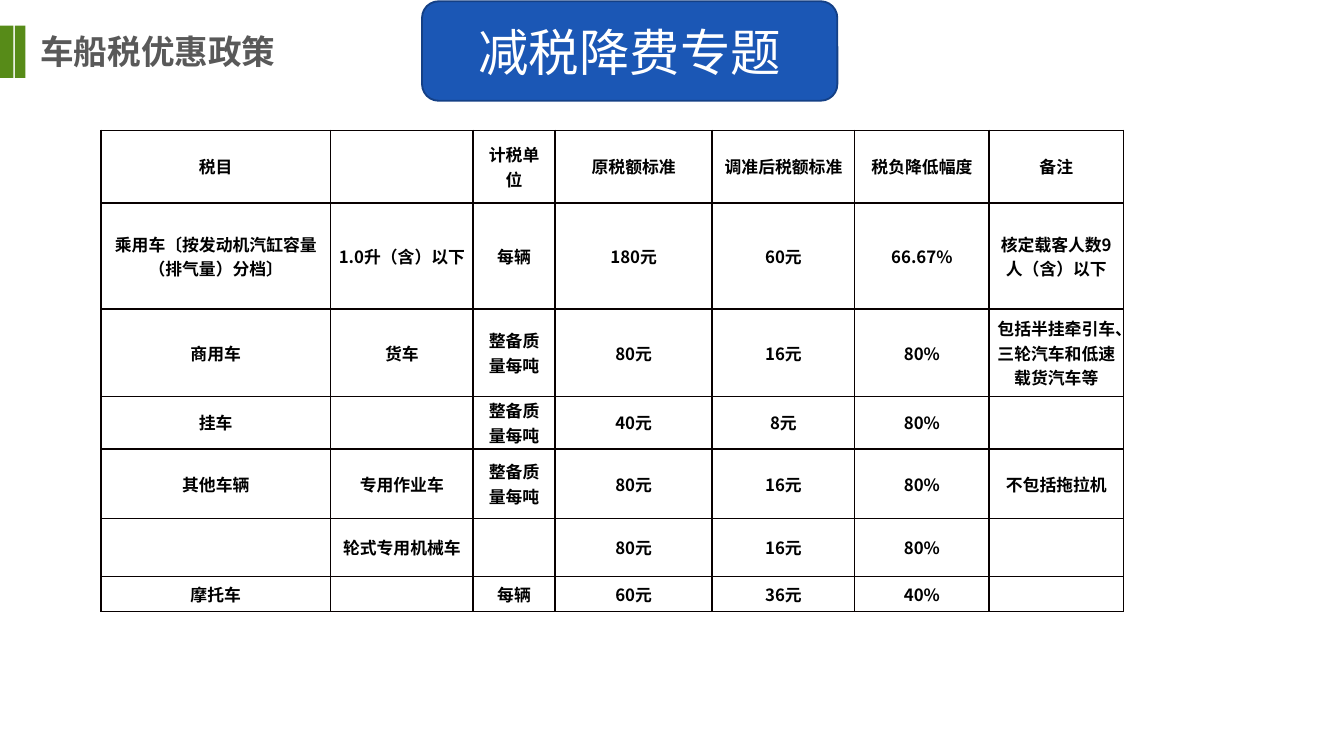
from lxml import etree
from pptx import Presentation
from pptx.dml.color import RGBColor
from pptx.enum.shapes import MSO_SHAPE
from pptx.enum.text import MSO_ANCHOR, MSO_AUTO_SIZE, PP_ALIGN
from pptx.oxml.ns import qn
from pptx.util import Inches, Pt

GREEN = RGBColor(0x57, 0x8B, 0x18)
BLUE = RGBColor(0x1B, 0x57, 0xB5)
NAVY = RGBColor(0x14, 0x40, 0x86)
GREY = RGBColor(0x59, 0x59, 0x59)
WHITE = RGBColor(0xFF, 0xFF, 0xFF)
BLACK = RGBColor(0x00, 0x00, 0x00)
BORDER = RGBColor(0x08, 0x00, 0x00)

RECTANGLE = MSO_SHAPE.RECTANGLE
BANNER = MSO_SHAPE.FLOWCHART_ALTERNATE_PROCESS
MIDDLE, TOP = MSO_ANCHOR.MIDDLE, MSO_ANCHOR.TOP
LEFT, CENTER = PP_ALIGN.LEFT, PP_ALIGN.CENTER
NO_AUTOSIZE = MSO_AUTO_SIZE.NONE

CJK_FONT = "Noto Sans CJK SC"
TITLE_FORMAT = {"name": CJK_FONT, "size": Pt(18), "bold": True}
BANNER_FORMAT = {"name": "Arial", "size": Pt(27), "bold": False}
CELL_FORMAT = {"name": CJK_FONT, "size": Pt(9), "bold": True}
BOX_FRAME = {
    "margin_left": Inches(0.07), "margin_right": Inches(0.07),
    "margin_top": Inches(0.04), "margin_bottom": Inches(0.04),
    "word_wrap": True, "auto_size": NO_AUTOSIZE,
}
CELL_FRAME = {
    "margin_left": Inches(0.06), "margin_right": Inches(0.06),
    "margin_top": 0, "margin_bottom": 0, "vertical_anchor": MIDDLE,
}

COLUMN_WIDTHS = [1.71, 1.06, 0.61, 1.17, 1.06, 1, 1]
ROW_HEIGHTS = [0.54, 0.79, 0.65, 0.39, 0.52, 0.43, 0.26]
TAX_ROWS = [
    ["税目", "", "计税单位", "原税额标准", "调准后税额标准", "税负降低幅度", "备注"],
    ["乘用车〔按发动机汽缸容量（排气量）分档〕", "1.0升（含）以下", "每辆",
     "180元", "60元", "66.67%", "核定载客人数9人（含）以下"],
    ["商用车", "货车", "整备质量每吨", "80元", "16元", "80%",
     "包括半挂牵引车、三轮汽车和低速载货汽车等"],
    ["挂车", "", "整备质量每吨", "40元", "8元", "80%", ""],
    ["其他车辆", "专用作业车", "整备质量每吨", "80元", "16元", "80%", "不包括拖拉机"],
    ["", "轮式专用机械车", "", "80元", "16元", "80%", ""],
    ["摩托车", "", "每辆", "60元", "36元", "40%", ""],
]


def apply_format(target, values):
    """Set every attribute named in a dict of format values."""
    for name, value in values.items():
        setattr(target, name, value)


def write_text(frame, text, values, color, align):
    """Write one formatted paragraph, keeping its size when it is empty."""
    para = frame.paragraphs[0]
    para.alignment = align
    if not text:
        end = etree.SubElement(para._p, qn("a:endParaRPr"))
        end.set("sz", str(int(values["size"].pt * 100)))
        return
    span = para.add_run()
    span.text = text
    apply_format(span.font, values)
    span.font.color.rgb = color
    east_asian = etree.SubElement(span.font._element, qn("a:ea"))
    east_asian.set("typeface", values["name"])


def add_title(page, text):
    """Place and format the title placeholder."""
    title = page.shapes.title
    apply_format(title, {"left": Inches(0.23), "top": Inches(0.19),
                         "width": Inches(2.71), "height": Inches(0.38)})
    apply_format(title.text_frame, BOX_FRAME | {"vertical_anchor": TOP})
    write_text(title.text_frame, text, TITLE_FORMAT, GREY, LEFT)


def add_box(page, kind, left, top, width, height, fill, line=None):
    """Add a flat filled shape with an optional outline."""
    box = page.shapes.add_shape(
        kind, Inches(left), Inches(top), Inches(width), Inches(height))
    box.shadow.inherit = False
    box.fill.solid()
    box.fill.fore_color.rgb = fill
    if line is None:
        box.line.fill.background()
    else:
        box.line.color.rgb = line
        box.line.width = Pt(1)
    return box


def add_banner(page, text):
    """Add the rounded topic banner."""
    banner = add_box(page, BANNER, 3.14, 0.01, 3.09, 0.74, BLUE, NAVY)
    apply_format(banner.text_frame, BOX_FRAME | {"vertical_anchor": MIDDLE})
    write_text(banner.text_frame, text, BANNER_FORMAT, WHITE, CENTER)


def set_borders(cell):
    """Draw a thin line on all four sides of a cell."""
    properties = cell._tc.get_or_add_tcPr()
    for index, side in enumerate(("a:lnL", "a:lnR", "a:lnT", "a:lnB")):
        line = etree.Element(qn(side), w=str(Pt(1)))
        fill = etree.SubElement(line, qn("a:solidFill"))
        etree.SubElement(fill, qn("a:srgbClr"), val=str(BORDER))
        properties.insert(index, line)


def add_tax_table(page):
    """Add the bordered table of tax rates."""
    frame = page.shapes.add_table(
        len(ROW_HEIGHTS), len(COLUMN_WIDTHS), Inches(0.75), Inches(0.97),
        Inches(sum(COLUMN_WIDTHS)), Inches(sum(ROW_HEIGHTS)))
    table = frame.table
    apply_format(table, {"first_row": False, "horz_banding": False})
    for column, width in zip(table.columns, COLUMN_WIDTHS):
        column.width = Inches(width)
    for row, height, texts in zip(table.rows, ROW_HEIGHTS, TAX_ROWS):
        row.height = Inches(height)
        for cell, text in zip(row.cells, texts):
            apply_format(cell, CELL_FRAME)
            cell.fill.background()
            set_borders(cell)
            write_text(cell.text_frame, text, CELL_FORMAT, BLACK, CENTER)


def main():
    """Build and save the vehicle tax slide."""
    deck = Presentation()
    deck.slide_width = Inches(10)
    deck.slide_height = deck.slide_width * 9 // 16
    page = deck.slides.add_slide(deck.slide_layouts[5])
    add_title(page, "车船税优惠政策")
    for left, width in ((0, 0.1), (0.11, 0.08)):
        add_box(page, RECTANGLE, left, 0.19, width, 0.39, GREEN)
    add_banner(page, "减税降费专题")
    add_tax_table(page)
    deck.save("out.pptx")


if __name__ == "__main__":
    main()
